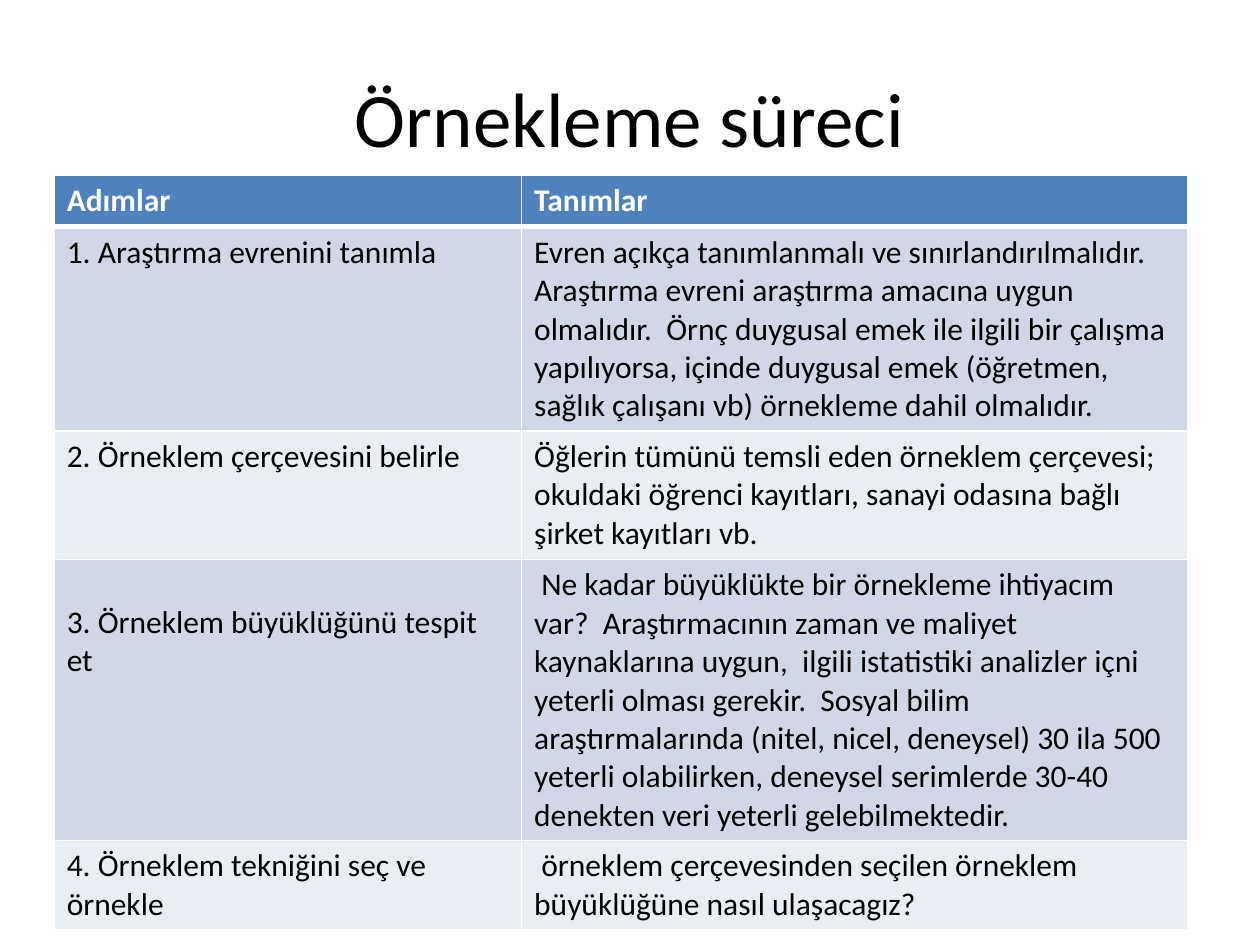
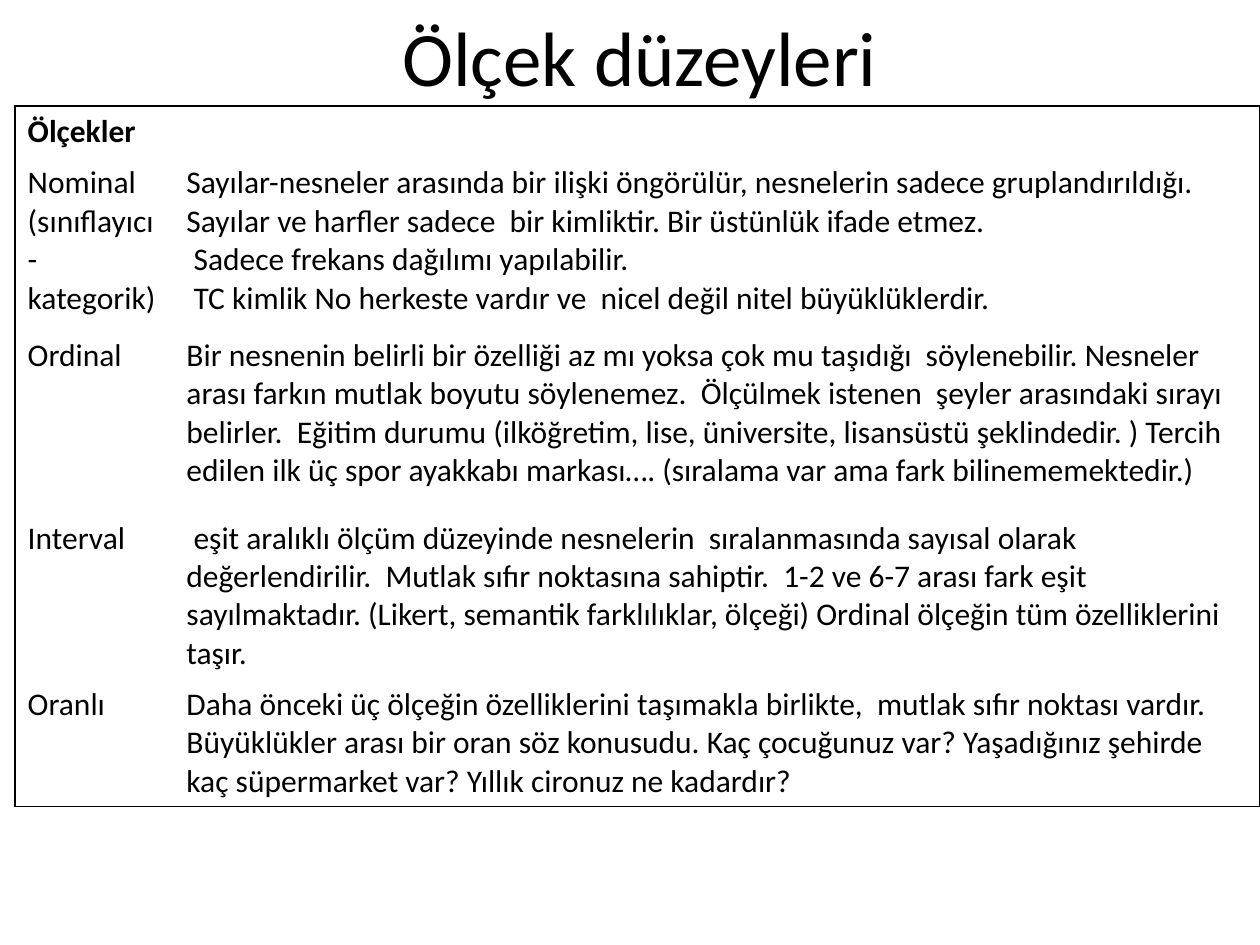
"""Build two slides on the sampling process and the levels of measurement scales."""
from dataclasses import dataclass
from typing import Optional

import lxml.etree
import pptx
import pptx.dml.color
import pptx.enum.text
import pptx.oxml.ns
import pptx.slide
import pptx.table
import pptx.text.text
import pptx.util

RGBColor = pptx.dml.color.RGBColor
BLACK = RGBColor(0x00, 0x00, 0x00)
WHITE = RGBColor(0xFF, 0xFF, 0xFF)
BLUE = RGBColor(0x4F, 0x81, 0xBD)
DARK_BAND = RGBColor(0xD0, 0xD8, 0xE8)
LIGHT_BAND = RGBColor(0xE9, 0xED, 0xF4)

FONT = "Calibri"
SLIDE_WIDTH = pptx.util.Inches(10)
SLIDE_HEIGHT = pptx.util.Inches(7.5)
GRID_COLUMNS = 1000
GRID_ROWS = 750


@dataclass(frozen=True)
class Area:
    """A rectangle in grid columns and rows."""

    column: int
    row: int
    columns: int
    rows: int


@dataclass(frozen=True)
class TableStyle:
    """The colours and ruling of a table."""

    header_text: RGBColor
    header_fill: Optional[RGBColor]
    band_fills: tuple[Optional[RGBColor], ...]
    line: RGBColor
    inner_lines: bool
    header_line_width: float


@dataclass(frozen=True)
class TableSlide:
    """A title above a two-column table."""

    title: str
    title_area: Area
    left: int
    top: int
    column_widths: tuple[int, ...]
    row_heights: tuple[int, ...]
    cells: tuple[tuple[str, str], ...]
    style: TableStyle
    lowered_row: Optional[int] = None


BANDED = TableStyle(WHITE, BLUE, (DARK_BAND, LIGHT_BAND), WHITE, True, 3)
FRAMED = TableStyle(BLACK, None, (None,), BLACK, False, 1)

SLIDES = (
    TableSlide(
        title="Örnekleme süreci",
        title_area=Area(50, 30, 900, 125),
        left=43,
        top=139,
        column_widths=(371, 529),
        row_heights=(41, 162, 102, 223, 71),
        cells=(
            ("Adımlar", "Tanımlar"),
            (
                "1. Araştırma evrenini tanımla",
                "Evren açıkça tanımlanmalı ve sınırlandırılmalıdır. Araştırma evreni araştırma "
                "amacına uygun olmalıdır.  Örnç duygusal emek ile ilgili bir çalışma yapılıyorsa, "
                "içinde duygusal emek (öğretmen, sağlık çalışanı vb) örnekleme dahil olmalıdır.",
            ),
            (
                "2. Örneklem çerçevesini belirle",
                "Öğlerin tümünü temsli eden örneklem çerçevesi; okuldaki öğrenci kayıtları, "
                "sanayi odasına bağlı şirket kayıtları vb.",
            ),
            (
                "3. Örneklem büyüklüğünü tespit et",
                " Ne kadar büyüklükte bir örnekleme ihtiyacım var?  Araştırmacının zaman ve "
                "maliyet kaynaklarına uygun,  ilgili istatistiki analizler içni yeterli olması "
                "gerekir.  Sosyal bilim araştırmalarında (nitel, nicel, deneysel) 30 ila 500 "
                "yeterli olabilirken, deneysel serimlerde 30-40 denekten veri yeterli "
                "gelebilmektedir.",
            ),
            (
                "4. Örneklem tekniğini seç ve örnekle",
                " örneklem çerçevesinden seçilen örneklem büyüklüğüne nasıl ulaşacagız?",
            ),
        ),
        style=BANDED,
        lowered_row=3,
    ),
    TableSlide(
        title=" Ölçek düzeyleri",
        title_area=Area(51, -3, 900, 95),
        left=12,
        top=84,
        column_widths=(126, 862),
        row_heights=(41, 137, 145, 132, 101),
        cells=(
            ("Ölçekler", ""),
            (
                "Nominal\n(sınıflayıcı-kategorik)",
                "Sayılar-nesneler arasında bir ilişki öngörülür, nesnelerin sadece "
                "gruplandırıldığı. Sayılar ve harfler sadece  bir kimliktir. Bir üstünlük ifade "
                "etmez.\n Sadece frekans dağılımı yapılabilir.\n"
                " TC kimlik No herkeste vardır ve  nicel değil nitel büyüklüklerdir.",
            ),
            (
                "Ordinal",
                "Bir nesnenin belirli bir özelliği az mı yoksa çok mu taşıdığı  söylenebilir. "
                "Nesneler arası farkın mutlak boyutu söylenemez.  Ölçülmek istenen  şeyler "
                "arasındaki sırayı belirler.  Eğitim durumu (ilköğretim, lise, üniversite, "
                "lisansüstü şeklindedir. ) Tercih edilen ilk üç spor ayakkabı markası…. "
                "(sıralama var ama fark bilinememektedir.)",
            ),
            (
                "Interval",
                " eşit aralıklı ölçüm düzeyinde nesnelerin  sıralanmasında sayısal olarak "
                "değerlendirilir.  Mutlak sıfır noktasına sahiptir.  1-2 ve 6-7 arası fark eşit "
                "sayılmaktadır. (Likert, semantik farklılıklar, ölçeği) Ordinal ölçeğin tüm "
                "özelliklerini taşır.",
            ),
            (
                "Oranlı",
                "Daha önceki üç ölçeğin özelliklerini taşımakla birlikte,  mutlak sıfır noktası "
                "vardır. Büyüklükler arası bir oran söz konusudu. Kaç çocuğunuz var? "
                "Yaşadığınız şehirde kaç süpermarket var? Yıllık cironuz ne kadardır?",
            ),
        ),
        style=FRAMED,
    ),
)


def across(columns: int) -> int:
    """Turn grid columns into a length."""
    return SLIDE_WIDTH * columns // GRID_COLUMNS


def down(rows: int) -> int:
    """Turn grid rows into a length."""
    return SLIDE_HEIGHT * rows // GRID_ROWS


def write_text(
    frame: pptx.text.text.TextFrame,
    text: str,
    *,
    size: float = 18,
    color: RGBColor = BLACK,
    bold: bool = False,
    alignment: pptx.enum.text.PP_ALIGN = pptx.enum.text.PP_ALIGN.LEFT,
) -> None:
    """Fill a frame with one formatted paragraph per line of text."""
    frame.word_wrap = True
    for index, line in enumerate(text.split("\n")):
        paragraph = frame.paragraphs[0] if index == 0 else frame.add_paragraph()
        paragraph.alignment = alignment
        paragraph.font.size = pptx.util.Pt(size)
        if not line:
            continue
        run = paragraph.add_run()
        run.text = line
        run.font.name = FONT
        run.font.size = pptx.util.Pt(size)
        run.font.bold = bold
        run.font.color.rgb = color


def add_border(cell: pptx.table._Cell, side: str, color: RGBColor, width: float) -> None:
    """Add one side of a cell's border, hidden when its width is zero."""
    qualified = pptx.oxml.ns.qn
    properties = cell._tc.get_or_add_tcPr()
    line = lxml.etree.SubElement(properties, qualified(f"a:ln{side}"))
    if not width:
        lxml.etree.SubElement(line, qualified("a:noFill"))
        return
    line.set("w", str(pptx.util.Pt(width)))
    fill = lxml.etree.SubElement(line, qualified("a:solidFill"))
    lxml.etree.SubElement(fill, qualified("a:srgbClr"), val=str(color))


def add_title(slide: pptx.slide.Slide, text: str, area: Area) -> None:
    """Add the centred slide title."""
    shape = slide.shapes.add_textbox(
        across(area.column), down(area.row), across(area.columns), down(area.rows)
    )
    shape.text_frame.vertical_anchor = pptx.enum.text.MSO_ANCHOR.MIDDLE
    write_text(shape.text_frame, text, size=44, alignment=pptx.enum.text.PP_ALIGN.CENTER)


def format_cell(
    cell: pptx.table._Cell, row: int, column: int, content: TableSlide
) -> None:
    """Write, rule and fill one table cell."""
    style = content.style
    last_row = len(content.row_heights) - 1
    last_column = len(content.column_widths) - 1
    outer_sides = {
        "L": column == 0,
        "R": column == last_column,
        "T": row == 0,
        "B": row == last_row,
    }
    for side, is_outer in outer_sides.items():
        width = 1 if is_outer or style.inner_lines else 0
        if style.inner_lines and (row, side) in ((0, "B"), (1, "T")):
            width = style.header_line_width
        add_border(cell, side, style.line, width)
    is_header = row == 0
    fill = style.header_fill if is_header else style.band_fills[(row - 1) % len(style.band_fills)]
    if fill is None:
        cell.fill.background()
    else:
        cell.fill.solid()
        cell.fill.fore_color.rgb = fill
    if row == content.lowered_row and column == 0:
        cell.margin_top = pptx.util.Inches(0.35)
    color = style.header_text if is_header else BLACK
    write_text(cell.text_frame, content.cells[row][column], color=color, bold=is_header)


def add_table(slide: pptx.slide.Slide, content: TableSlide) -> None:
    """Add the table of a slide."""
    table = slide.shapes.add_table(
        len(content.row_heights),
        len(content.column_widths),
        across(content.left),
        down(content.top),
        across(sum(content.column_widths)),
        down(sum(content.row_heights)),
    ).table
    table.first_row = False
    table.horz_banding = False
    for column, width in zip(table.columns, content.column_widths):
        column.width = across(width)
    for row_index, height in enumerate(content.row_heights):
        table.rows[row_index].height = down(height)
        for column_index in range(len(content.column_widths)):
            cell = table.cell(row_index, column_index)
            format_cell(cell, row_index, column_index, content)


def main() -> None:
    """Build and save the presentation."""
    presentation = pptx.Presentation()
    presentation.slide_width = SLIDE_WIDTH
    presentation.slide_height = SLIDE_HEIGHT
    blank_layout = presentation.slide_layouts[6]
    for content in SLIDES:
        slide = presentation.slides.add_slide(blank_layout)
        add_title(slide, content.title, content.title_area)
        add_table(slide, content)
    presentation.save("out.pptx")


if __name__ == "__main__":
    main()
